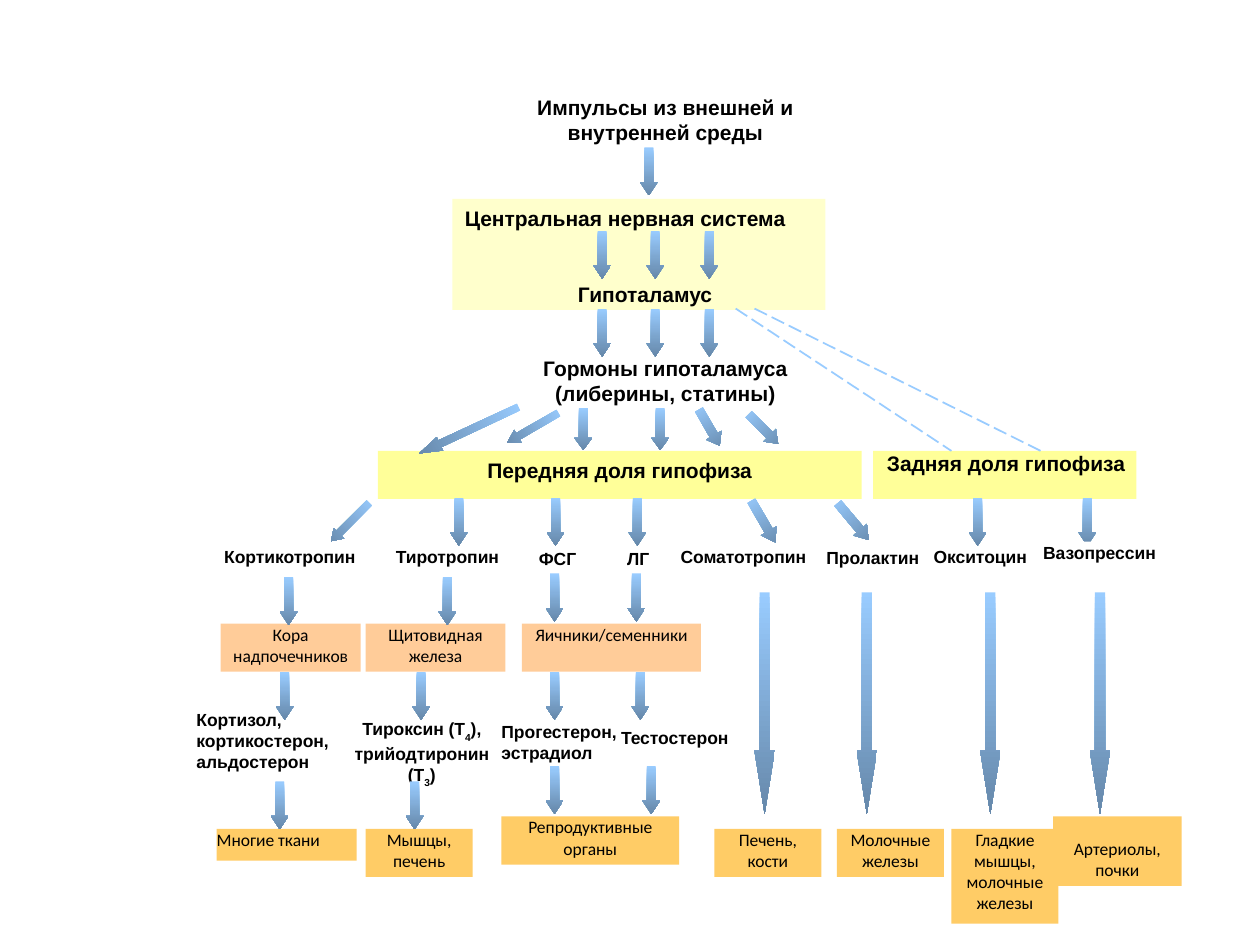
"""Build a slide with the scheme of hormonal regulation through the hypothalamus and pituitary."""
from lxml.etree import SubElement
from pptx import Presentation
from pptx.dml.color import RGBColor
from pptx.enum.dml import MSO_LINE
from pptx.enum.shapes import MSO_CONNECTOR, MSO_SHAPE
from pptx.enum.text import MSO_ANCHOR, PP_ALIGN
from pptx.oxml.ns import qn
from pptx.util import Cm, Pt

rgb = RGBColor.from_string
L, C = PP_ALIGN.LEFT, PP_ALIGN.CENTER

prs = Presentation()
prs.slide_width, prs.slide_height = Cm(25.4), Cm(19.05)
s = prs.slides.add_slide(prs.slide_layouts[6])


def add_box(text, x, y, w, h, fill, font, size, align=C, inset=(0, 0), gap=0):
    """Add a text rectangle; parts between bars are subscripts."""
    if fill:
        sp = s.shapes.add_shape(MSO_SHAPE.RECTANGLE, Cm(x), Cm(y), Cm(w), Cm(h))
        sp.shadow.inherit = False
        sp.fill.solid()
        sp.fill.fore_color.rgb = rgb(fill)
        sp.line.fill.background()
    else:
        sp = s.shapes.add_textbox(Cm(x), Cm(y), Cm(w), Cm(h))
    tf = sp.text_frame
    tf.word_wrap = True
    tf.vertical_anchor = MSO_ANCHOR.TOP
    tf.margin_left, tf.margin_top = Cm(inset[0]), Cm(inset[1])
    tf.margin_right = tf.margin_bottom = 0
    for i, line in enumerate(text.split("\n")):
        p = tf.add_paragraph() if i else tf.paragraphs[0]
        p.alignment = align if i or not gap else L
        p.space_before = Pt(gap if i else 0)
        for j, part in enumerate(line.split("|")):
            r = p.add_run()
            r.text = part
            r.font.name, r.font.size = font, Pt(size)
            r.font.bold = font == "Arial"
            r.font.color.rgb = rgb("000000")
            if j % 2:
                r.font._element.set("baseline", "-30000")


def add_arrow(x, y, w=0.36, h=0.97, head=0.75, angle=0):
    """Add a down arrow with a vertical gradient."""
    sp = s.shapes.add_shape(MSO_SHAPE.DOWN_ARROW, Cm(x), Cm(y), Cm(w), Cm(h))
    sp.shadow.inherit = False
    sp.adjustments[0], sp.adjustments[1] = 0.5, head
    sp.rotation = angle
    sp.fill.gradient()
    sp.fill.gradient_angle = 270
    for stop, color in zip(sp.fill.gradient_stops, ("99CCFF", "6688AA")):
        stop.color.rgb = rgb(color)
    sp.line.fill.background()


add_box("Центральная нервная система\nГипоталамус", 9.12, 4.01, 7.52, 2.24,
        "FFFFCC", "Arial", 12, inset=(0.25, 0.13), gap=29)
add_box("Импульсы из внешней и внутренней среды", 10.52, 1.78, 5.79, 1.27,
        "FFFFFF", "Arial", 12, inset=(0, 0.13))
add_box("Гормоны гипоталамуса\n(либерины, статины)", 10.52, 7.16, 5.79, 1.27,
        "FFFFFF", "Arial", 12)
add_box("Передняя доля гипофиза", 7.62, 9.09, 9.75, 0.97,
        "FFFF99", "Arial", 12, inset=(0, 0.13))
add_box("Задняя доля гипофиза", 17.6, 9.09, 5.31, 0.97,
        "FFFF99", "Arial", 12, L, inset=(0.28, 0))

hormones = [
    ("Кортикотропин", 4.52, 11, 2.74, 0.64, L),
    ("Тиротропин", 7.57, 11, 2.9, 0.64, C),
    ("ФСГ", 10.67, 11.05, 1.14, 0.64, C),
    ("ЛГ", 12.37, 11.05, 0.99, 0.64, C),
    ("Соматотропин", 13.72, 11, 2.59, 0.64, L),
    ("Пролактин", 16.66, 11.02, 2.24, 0.61, L),
    ("Окситоцин", 18.82, 11, 2.16, 0.61, L),
    ("Прогестерон,\nэстрадиол", 10.11, 14.53, 2.54, 0.97, L),
    ("Тестостерон", 12.52, 14.66, 2.54, 0.64, L),
]
for text, x, y, w, h, align in hormones:
    add_box(text, x, y, w, h, "FFFFFF", "Arial", 10, align)
add_box("Тироксин (Т|4|),\nтрийодтиронин (Т|3|)", 6.88, 14.48, 3.25, 1.27, None, "Arial", 10)

glands = [
    ("Кора\nнадпочечников", 4.45, 2.82),
    ("Щитовидная\nжелеза", 7.37, 2.82),
    ("Яичники/семенники", 10.52, 3.61),
]
for text, x, w in glands:
    add_box(text, x, 12.57, w, 0.97, "FFCC99", "Calibri", 10)

targets = [
    ("Многие ткани", 4.37, 16.71, 2.82, 0.64, L, 0),
    ("Мышцы,\nпечень", 7.37, 16.71, 2.16, 0.97, C, 0),
    ("Репродуктивные органы", 10.11, 16.46, 3.58, 0.97, C, 0),
    ("Печень,\nкости", 14.4, 16.71, 2.16, 0.97, C, 0),
    ("Молочные железы", 16.87, 16.71, 2.16, 0.97, C, 0),
    ("Гладкие мышцы,\nмолочные железы", 19.18, 16.71, 2.16, 1.91, C, 0),
    ("Артериолы,\nпочки", 21.23, 16.46, 2.59, 1.4, C, 0.43),
]
for text, x, y, w, h, align, top in targets:
    add_box(text, x, y, w, h, "FFCC66", "Calibri", 10, align, (0, top))

arrow_rows = [
    (2.97, [12.9]),
    (4.65, [11.96, 13.03, 14.12]),
    (6.22, [11.96, 13.03, 14.12]),
    (10.03, [9.07, 11.02, 12.67, 19.53, 21.74]),
    (11.63, [5.64, 8.84]),
    (11.56, [11, 12.65]),
    (13.54, [5.56, 8.31, 11, 12.73]),
    (15.75, [5.46, 8.18]),
    (15.44, [11, 12.95]),
]
for y, lefts in arrow_rows:
    for x in lefts:
        add_arrow(x, y)
for x in (11.58, 13.13):
    add_arrow(x, 8.23, h=0.84, head=0.67)
for x in (15.21, 17.27, 19.76, 21.97):
    add_arrow(x, 11.94, 0.41, 4.47, 3.11)

tilted_arrows = [
    (9.3, 7.57, 0.3, 2.21, 1.54, 65),
    (10.59, 8.03, 0.3, 1.19, 0.83, 60),
    (14.12, 8.2, 0.36, 0.84, 0.67, 330),
    (15.21, 8.23, 0.36, 0.84, 0.67, 315),
    (6.91, 9.98, 0.3, 1.09, 0.75, 45),
    (15.21, 10.03, 0.36, 0.97, 0.75, 330),
    (17.02, 10.03, 0.36, 0.97, 0.75, 320),
]
for arrow in tilted_arrows:
    add_arrow(*arrow)

for x1, x2 in ((15.21, 20.98), (14.83, 19.18)):
    cn = s.shapes.add_connector(MSO_CONNECTOR.STRAIGHT, Cm(x1), Cm(6.22), Cm(x2), Cm(9.09))
    cn.line.color.rgb = rgb("99CCFF")
    cn.line.width = Pt(1)
    cn.line.dash_style = MSO_LINE.LONG_DASH
    SubElement(cn._element.spPr, qn("a:effectLst"))

add_box("Вазопрессин", 21.03, 10.92, 2.64, 0.81, "FFFFFF", "Arial", 10, L)
add_box("Кортизол,\nкортикостерон,\nальдостерон", 3.96, 14.3, 2.97, 1.57, None, "Arial", 10, L)

prs.save("out.pptx")
